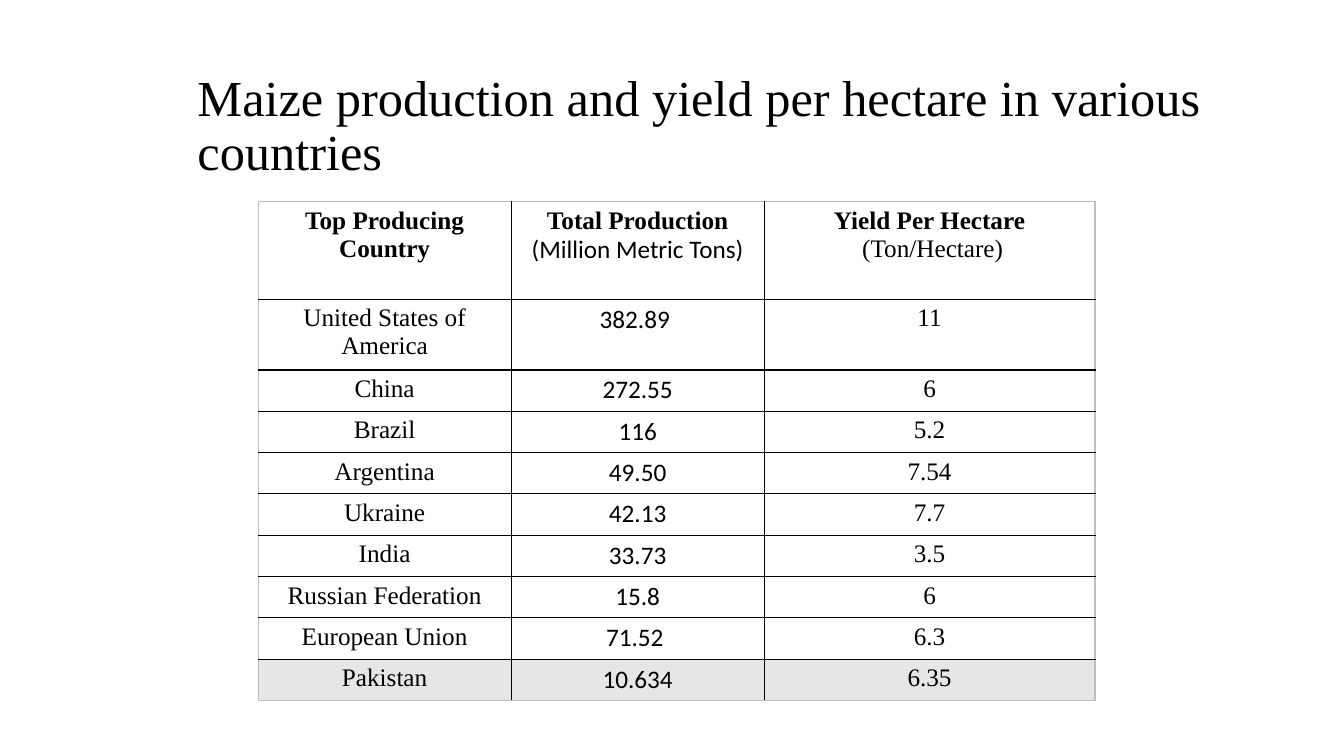
import dataclasses

import lxml.etree
import pptx
import pptx.dml.color
import pptx.enum.text
import pptx.oxml.ns
import pptx.util

Inches = pptx.util.Inches
Pt = pptx.util.Pt


@dataclasses.dataclass(frozen=True)
class Theme:
    text: str = "000000"
    grid: str = "000000"
    frame: str = "BFBFBF"
    highlight: str = "E7E6E6"
    serif: str = "Times New Roman"
    sans: str = "Calibri"
    title_size: int = 36
    table_size: int = 18
    line_width: int = 1


THEME = Theme()
SLIDE_WIDTH, SLIDE_HEIGHT = 13.33, 7.5
TITLE = "Maize production and yield per hectare in various countries"
TITLE_BOX = (1.86, 0.56, 10.19, 1.4)
TABLE_BOX = (2.56, 2, 8.3, 4.9)
COLUMN_WIDTHS = (2.51, 2.51, 3.28)
HEADER_HEIGHT, TWO_LINE_HEIGHT, LINE_HEIGHT = 0.97, 0.65, 0.41
COLUMN_FONTS = (THEME.serif, THEME.sans, THEME.serif)

# Each heading is a bold name, followed by its unit where it has one.
HEADINGS = (
    ("Top Producing Country",),
    ("Total Production", "(Million Metric Tons)"),
    ("Yield Per Hectare", " (Ton/Hectare)"),
)
COUNTRIES = (
    ("United States of America", "382.89\u00a0".replace("\u00a0", " "), "11"),
    ("China", "272.55", "6"),
    ("Brazil", "116", "5.2"),
    ("Argentina", "49.50", "7.54"),
    ("Ukraine", "42.13", "7.7"),
    ("India", "33.73", "3.5"),
    ("Russian Federation", "15.8", "6"),
    ("European Union", "71.52 ", "6.3"),
    ("Pakistan", "10.634", "6.35"),
)
HIGHLIGHTED = "Pakistan"


def rgb(color):
    return pptx.dml.color.RGBColor.from_string(color)


def style_paragraph(paragraph, font_name, size, bold=False):
    paragraph.font.name = font_name
    paragraph.font.size = Pt(size)
    paragraph.font.bold = bold
    paragraph.font.color.rgb = rgb(THEME.text)


def add_title(slide, box):
    text_frame = slide.shapes.add_textbox(*map(Inches, box)).text_frame
    text_frame.word_wrap = True
    text_frame.vertical_anchor = pptx.enum.text.MSO_ANCHOR.MIDDLE
    paragraph = text_frame.paragraphs[0]
    paragraph.text = TITLE
    paragraph.line_spacing = 0.9
    style_paragraph(paragraph, THEME.serif, THEME.title_size)


def set_borders(cell, outer_sides):
    """Draw all four sides, with the frame colour on the table's outer sides."""
    properties = cell._tc.get_or_add_tcPr()
    qn = pptx.oxml.ns.qn
    for side in "LRTB":
        line = lxml.etree.SubElement(
            properties, qn(f"a:ln{side}"), w=str(Pt(THEME.line_width)))
        fill = lxml.etree.SubElement(line, qn("a:solidFill"))
        color = THEME.frame if side in outer_sides else THEME.grid
        lxml.etree.SubElement(fill, qn("a:srgbClr"), val=color)


def fill_cell(cell, lines, fonts, bolds):
    cell.text = "\n".join(lines)
    for paragraph, font_name, bold in zip(cell.text_frame.paragraphs, fonts, bolds):
        paragraph.alignment = pptx.enum.text.PP_ALIGN.CENTER
        style_paragraph(paragraph, font_name, THEME.table_size, bold)


def add_production_table(slide, box):
    row_count, column_count = len(COUNTRIES) + 1, len(HEADINGS)
    table = slide.shapes.add_table(
        row_count, column_count, *map(Inches, box)).table
    table.first_row = table.horz_banding = False
    for column, width in zip(table.columns, COLUMN_WIDTHS):
        column.width = Inches(width)
    heights = [HEADER_HEIGHT, TWO_LINE_HEIGHT] + [LINE_HEIGHT] * (row_count - 2)
    for row, height in zip(table.rows, heights):
        row.height = Inches(height)

    for column, (heading, value_font) in enumerate(zip(HEADINGS, COLUMN_FONTS)):
        fill_cell(table.cell(0, column), heading,
                  (THEME.serif, value_font), (True, False))
        for row, country in enumerate(COUNTRIES, start=1):
            fill_cell(table.cell(row, column), (country[column],),
                      (value_font,), (False,))

        for row in range(row_count):
            cell = table.cell(row, column)
            edges = {"L": column == 0, "R": column == column_count - 1,
                     "T": row == 0, "B": row == row_count - 1}
            set_borders(cell, [side for side, outer in edges.items() if outer])
            if row and COUNTRIES[row - 1][0] == HIGHLIGHTED:
                cell.fill.solid()
                cell.fill.fore_color.rgb = rgb(THEME.highlight)
            else:
                cell.fill.background()


def main():
    presentation = pptx.Presentation()
    presentation.slide_width = Inches(SLIDE_WIDTH)
    presentation.slide_height = Inches(SLIDE_HEIGHT)
    slide = presentation.slides.add_slide(presentation.slide_layouts[6])
    add_title(slide, TITLE_BOX)
    add_production_table(slide, TABLE_BOX)
    presentation.save("out.pptx")


if __name__ == "__main__":
    main()
